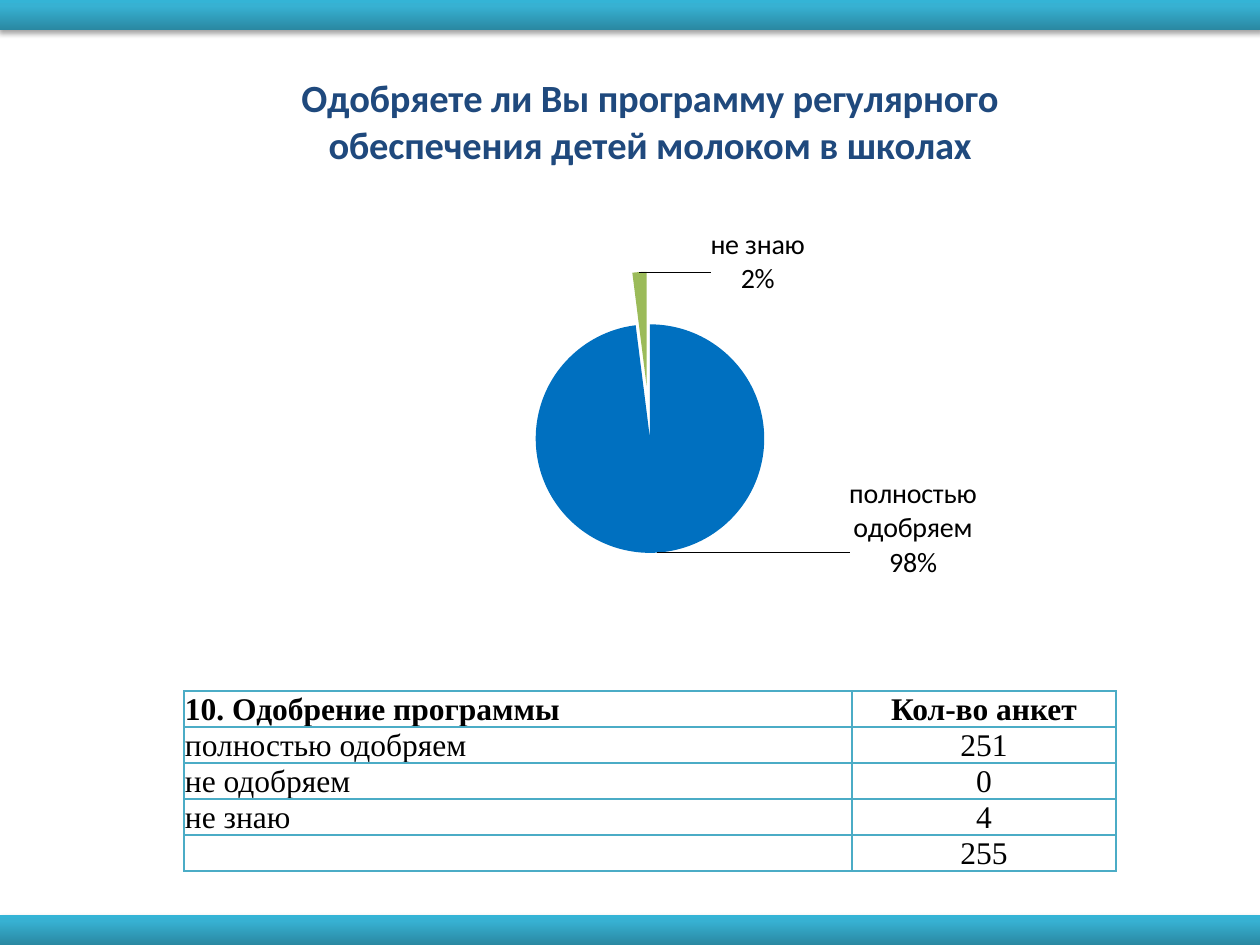
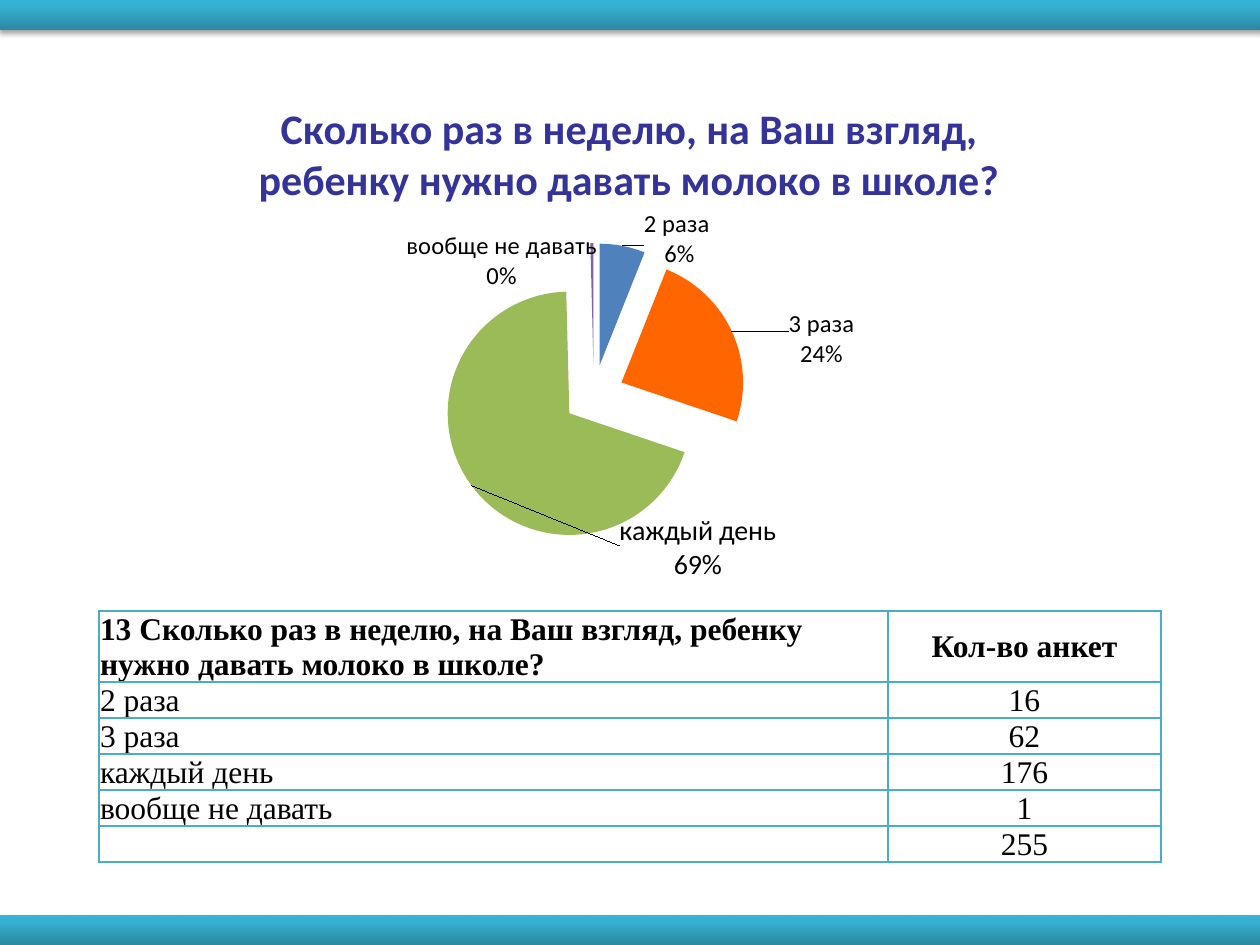
from dataclasses import dataclass

from lxml import etree
from pptx import Presentation
from pptx.chart.data import CategoryChartData
from pptx.dml.color import RGBColor
from pptx.enum.chart import XL_CHART_TYPE, XL_LABEL_POSITION
from pptx.enum.shapes import MSO_SHAPE
from pptx.enum.text import MSO_ANCHOR, PP_ALIGN
from pptx.oxml import parse_xml
from pptx.oxml.ns import qn
from pptx.util import Pt

PIE = XL_CHART_TYPE.PIE
OUTSIDE_END = XL_LABEL_POSITION.OUTSIDE_END
RECTANGLE = MSO_SHAPE.RECTANGLE
MIDDLE = MSO_ANCHOR.MIDDLE
LEFT, CENTER = PP_ALIGN.LEFT, PP_ALIGN.CENTER

PX = 914400 / 126
PAGE_WIDTH, PAGE_HEIGHT, BAND_HEIGHT, ROW_HEIGHT = 1260, 945, 30, 36
A_NS = "http://schemas.openxmlformats.org/drawingml/2006/main"


@dataclass(frozen=True)
class Theme:
    chart_font: str = "Calibri"
    table_font: str = "Times New Roman"
    text: str = "000000"
    border: str = "4BACC6"
    band_stops: tuple = ((0, "2A88A2"), (80, "37B1D2"), (100, "34B4D6"))
    chart_size: int = 10
    table_size: int = 18


THEME = Theme()
TEXT = RGBColor.from_string(THEME.text)

GRADIENT = (
    f'<a:gradFill xmlns:a="{A_NS}" rotWithShape="1"><a:gsLst>'
    + "".join(
        f'<a:gs pos="{stop * 1000}"><a:srgbClr val="{color}"/></a:gs>'
        for stop, color in THEME.band_stops
    )
    + '</a:gsLst><a:lin ang="16200000" scaled="0"/></a:gradFill>'
)
SHADOW = (
    f'<a:effectLst xmlns:a="{A_NS}"><a:outerShdw blurRad="39400" dist="22900" dir="5400000"'
    ' rotWithShape="0"><a:srgbClr val="000000"><a:alpha val="35000"/></a:srgbClr>'
    "</a:outerShdw></a:effectLst>"
)

# Each slice: category, percent, colour, explosion, label size, label shift, own label text
SURVEYS = [
    dict(
        title="Одобряете ли Вы программу регулярного обеспечения детей молоком в школах",
        title_size=22,
        title_color="1F497D",
        chart_box=(194, 45, 912, 635),
        plot_area=(0.37, 0.44, 0.26, 0.36),
        slices=[
            ("полностью одобряем", 98, "0070C0", 0, 16, (0.28, -0.13), None),
            ("не одобряем", 0, "C0504D", 0, 16, None, None),
            ("не знаю", 2, "9BBB59", 46, 16, (0.13, 0.05), None),
        ],
        table_at=(184, 691),
        columns=(668, 264),
        header_height=ROW_HEIGHT,
        rows=[
            ("10. Одобрение программы", "Кол-во анкет"),
            ("полностью одобряем", "251"),
            ("не одобряем", "0"),
            ("не знаю", "4"),
            ("", "255"),
        ],
    ),
    dict(
        title="Сколько раз в неделю, на Ваш взгляд, ребенку нужно давать молоко в школе?",
        title_size=24,
        title_color="333399",
        chart_box=(128, 76, 1002, 507),
        plot_area=(0.34, 0.39, 0.25, 0.48),
        slices=[
            ("2 раза ", 6, "4F81BD", 25, 14, (0.02, 0.06), None),
            ("3 раза", 24, "FF6600", 25, 14, (0.05, 0.08), None),
            ("каждый день", 69, "9BBB59", 25, 16, (0.31, 0.11), "каждый день\n69%"),
            # One answer of 255: a sliver whose label rounds to 0%
            ("вообще не давать", 0.4, "8064A2", 25, 14, (-0.09, 0.11), None),
        ],
        table_at=(99, 611),
        columns=(789, 273),
        header_height=71,
        rows=[
            ("13 Сколько раз в неделю, на Ваш взгляд, ребенку нужно давать молоко в школе?",
             "Кол-во анкет"),
            ("2 раза", "16"),
            ("3 раза", "62"),
            ("каждый день", "176"),
            ("вообще не давать", "1"),
            ("", "255"),
        ],
    ),
]


def emu(*lengths):
    """Turn px lengths into EMU."""
    return [round(length * PX) for length in lengths]


def manual_layout(**settings):
    layout = etree.Element(qn("c:layout"))
    manual = etree.SubElement(layout, qn("c:manualLayout"))
    for name, value in settings.items():
        etree.SubElement(manual, qn(f"c:{name}")).set("val", str(value))
    return layout


deck = Presentation()
deck.slide_width, deck.slide_height = emu(PAGE_WIDTH, PAGE_HEIGHT)
blank_layout = deck.slide_layouts[6]

for survey in SURVEYS:
    page = deck.slides.add_slide(blank_layout)

    for top in (PAGE_HEIGHT - BAND_HEIGHT, 0):
        band = page.shapes.add_shape(RECTANGLE, *emu(0, top, PAGE_WIDTH, BAND_HEIGHT))
        band.line.fill.background()
        properties = band._element.spPr
        properties.find(qn("a:prstGeom")).addnext(parse_xml(GRADIENT))
        properties.append(parse_xml(SHADOW))

    # Answer counts
    rows, columns = survey["rows"], survey["columns"]
    heights = [survey["header_height"]] + [ROW_HEIGHT] * (len(rows) - 1)
    frame = page.shapes.add_table(
        len(rows), len(columns), *emu(*survey["table_at"], sum(columns), sum(heights))
    )
    table = frame.table
    table.first_row = table.horz_banding = False
    for column, width in zip(table.columns, emu(*columns)):
        column.width = width
    for row, height in zip(table.rows, emu(*heights)):
        row.height = height
    for row_index, texts in enumerate(rows):
        for column_index, text in enumerate(texts):
            cell = table.cell(row_index, column_index)
            cell.text = text
            cell.vertical_anchor = MIDDLE
            cell.margin_left, cell.margin_right, cell.margin_top, cell.margin_bottom = emu(1, 1, 1, 0)
            para = cell.text_frame.paragraphs[0]
            para.alignment = CENTER if column_index else LEFT
            para.font.name = THEME.table_font
            para.font.size = Pt(THEME.table_size)
            para.font.bold = row_index == 0
            para.font.color.rgb = TEXT
            cell_properties = cell._tc.get_or_add_tcPr()
            for side in ("lnL", "lnR", "lnT", "lnB"):
                cell_properties.append(parse_xml(
                    f'<a:{side} xmlns:a="{A_NS}" w="12700"><a:solidFill>'
                    f'<a:srgbClr val="{THEME.border}"/></a:solidFill></a:{side}>'
                ))
            cell.fill.background()

    # Share of answers
    slices = survey["slices"]
    data = CategoryChartData()
    data.categories = [item[0] for item in slices]
    data.add_series("Series 1", [item[1] for item in slices])
    chart = page.shapes.add_chart(PIE, *emu(*survey["chart_box"]), data).chart
    chart.has_legend = False
    chart.font.name = THEME.chart_font
    chart.font.size = Pt(THEME.chart_size)
    chart.font.color.rgb = TEXT
    chart.has_title = True
    title_frame = chart.chart_title.text_frame
    title_frame.text = survey["title"]
    title_font = title_frame.paragraphs[0].font
    title_font.name = THEME.chart_font
    title_font.size = Pt(survey["title_size"])
    title_font.bold = True
    title_font.color.rgb = RGBColor.from_string(survey["title_color"])

    plot_area = chart._chartSpace.chart.plotArea
    for old_layout in plot_area.findall(qn("c:layout")):
        plot_area.remove(old_layout)
    x, y, w, h = survey["plot_area"]
    plot_area.insert(0, manual_layout(
        layoutTarget="inner", xMode="edge", yMode="edge", x=x, y=y, w=w, h=h
    ))

    plot = chart.plots[0]
    plot.vary_by_categories = True
    series = plot.series[0]
    series.data_labels.show_value = False
    labels = series.data_labels._element
    for index, (_, _, color, explosion, size, shift, label_text) in enumerate(slices):
        point = series.points[index]
        point.format.fill.solid()
        point.format.fill.fore_color.rgb = RGBColor.from_string(color)
        outline = series._element.findall(qn("c:dPt"))[-1].find(qn("c:spPr"))
        burst = etree.Element(qn("c:explosion"), val=str(explosion))
        outline.addprevious(burst)
        if shift is None:
            continue

        label = point.data_label
        if label_text:
            label.text_frame.text = label_text
            fonts = [para.font for para in label.text_frame.paragraphs]
        else:
            fonts = [label.font]
        for font in fonts:
            font.name = THEME.chart_font
            font.size = Pt(size)
            font.color.rgb = TEXT
        label.position = OUTSIDE_END
        node = labels.findall(qn("c:dLbl"))[-1]
        node.find(qn("c:idx")).addnext(manual_layout(x=shift[0], y=shift[1]))
        for flag, shown in (("showVal", 0), ("showCatName", 1), ("showPercent", 1)):
            node.find(qn(f"c:{flag}")).set("val", str(shown))
        separator = etree.Element(qn("c:separator"))
        separator.text = "\n"
        node.find(qn("c:showBubbleSize")).addnext(separator)

deck.save("out.pptx")
